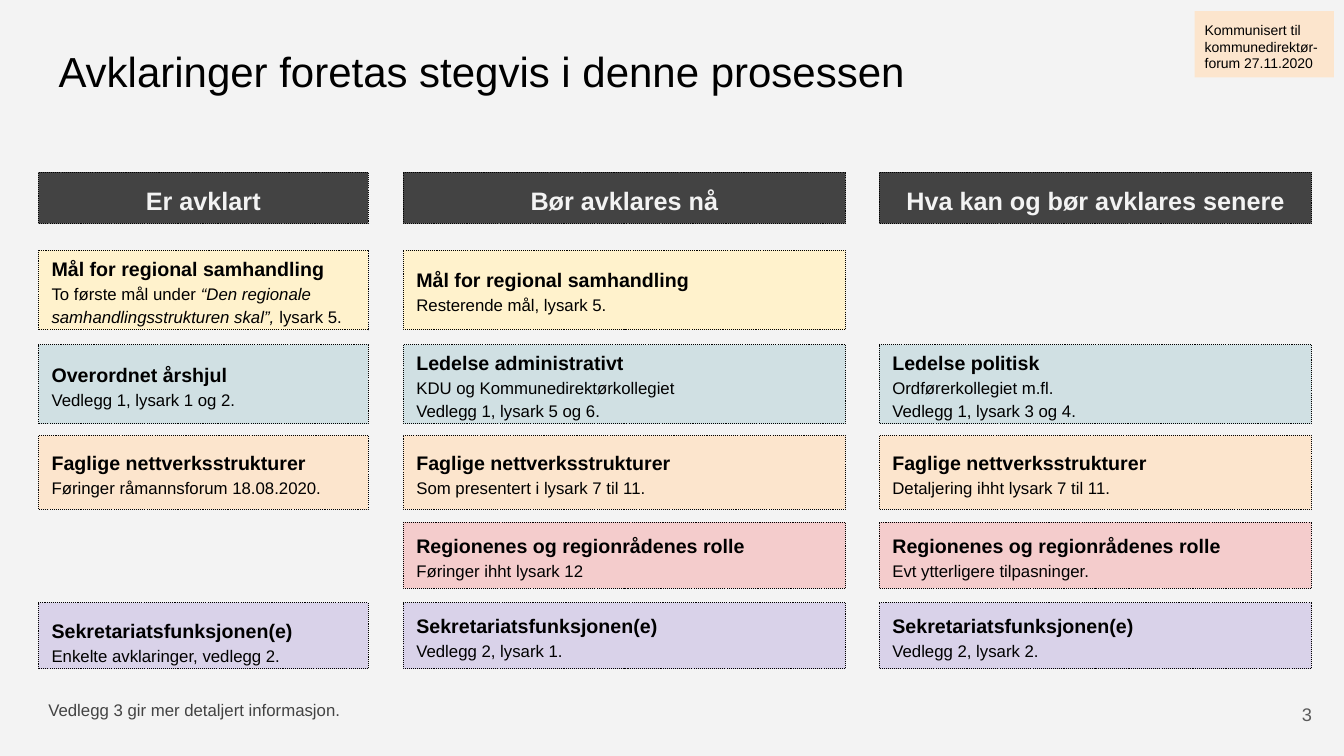
from pptx import Presentation
from pptx.dml.color import RGBColor
from pptx.enum.dml import MSO_LINE
from pptx.enum.shapes import MSO_SHAPE
from pptx.enum.text import MSO_ANCHOR, MSO_AUTO_SIZE, PP_ALIGN
from pptx.util import Pt

RECTANGLE = MSO_SHAPE.RECTANGLE
DOTTED = MSO_LINE.ROUND_DOT
TOP, MIDDLE = MSO_ANCHOR.TOP, MSO_ANCHOR.MIDDLE
LEFT, CENTER, RIGHT = PP_ALIGN.LEFT, PP_ALIGN.CENTER, PP_ALIGN.RIGHT
NO_AUTOFIT = MSO_AUTO_SIZE.NONE

BLACK = RGBColor(0x00, 0x00, 0x00)
CHARCOAL = RGBColor(0x43, 0x43, 0x43)
GRAY = RGBColor(0x59, 0x59, 0x59)
LIGHT = RGBColor(0xF3, 0xF3, 0xF3)
YELLOW = RGBColor(0xFF, 0xF2, 0xCC)
TEAL = RGBColor(0xD0, 0xE0, 0xE3)
ORANGE = RGBColor(0xFC, 0xE5, 0xCD)
PINK = RGBColor(0xF4, 0xCC, 0xCC)
PURPLE = RGBColor(0xD9, 0xD2, 0xE9)

WIDE_INSET, NARROW_INSET = 9.4, 7.2


def write(box, lines, color=BLACK, align=LEFT, anchor=TOP, inset=WIDE_INSET, spacing=1.0):
    """Fill a box with lines, each a list of (text, size, bold, italic) spans."""
    frame = box.text_frame
    frame.word_wrap = True
    frame.auto_size = NO_AUTOFIT
    frame.vertical_anchor = anchor
    frame.margin_left = frame.margin_right = Pt(inset)
    frame.margin_top = frame.margin_bottom = Pt(inset)
    for index, line in enumerate(lines):
        para = frame.add_paragraph() if index else frame.paragraphs[0]
        para.alignment = align
        para.line_spacing = spacing
        for text, size, bold, italic in line:
            span = para.add_run()
            span.text = text
            span.font.name = "Arial"
            span.font.size = Pt(size)
            span.font.bold = bold
            span.font.italic = italic
            span.font.color.rgb = color


def add_panel(page, left, top, width, height, fill, dotted=True):
    panel = page.shapes.add_shape(RECTANGLE, Pt(left), Pt(top), Pt(width), Pt(height))
    panel.shadow.inherit = False
    panel.fill.solid()
    panel.fill.fore_color.rgb = fill
    if dotted:
        panel.line.color.rgb = BLACK
        panel.line.width = Pt(0.75)
        panel.line.dash_style = DOTTED
    else:
        panel.line.fill.background()
    return panel


deck = Presentation()
deck.slide_width, deck.slide_height = Pt(960), Pt(540)
page = deck.slides.add_slide(deck.slide_layouts[5])
page.background.fill.solid()
page.background.fill.fore_color.rgb = LIGHT

title = page.shapes.title
title.left, title.top, title.width, title.height = Pt(32.4), Pt(23), Pt(894), Pt(60)
write(title, [[("Avklaringer foretas stegvis i denne prosessen", 30, False, False)]])

# Columns: heading, left, width
columns = [
    ("Er avklart", 27.4, 235.6),
    ("Bør avklares nå", 288, 316),
    ("Hva kan og bør avklares senere", 628, 309),
]
for heading, left, width in columns:
    header = add_panel(page, left, 123, width, 36.7, CHARCOAL)
    write(header, [[(heading, 18, True, False)]], LIGHT, CENTER, MIDDLE, spacing=1.15)

# Rows: top, height, fill, then one card (topic, details) per column
network = "Faglige nettverksstrukturer"
goals = "Mål for regional samhandling"
regions = "Regionenes og regionrådenes rolle"
secretariat = "Sekretariatsfunksjonen(e)"
rows = [
    (178.6, 57, YELLOW, [
        (goals, [[("To første mål under ", False),
                  ("“Den regionale samhandlingsstrukturen skal”,", True),
                  (" lysark 5.", False)]]),
        (goals, [[("Resterende mål, lysark 5.", False)]]),
        None,
    ]),
    (246.2, 56.6, TEAL, [
        ("Overordnet årshjul", [[("Vedlegg 1, lysark 1 og 2.", False)]]),
        ("Ledelse administrativt", [[("KDU og Kommunedirektørkollegiet", False)],
                                    [("Vedlegg 1, lysark 5 og 6.", False)]]),
        ("Ledelse politisk", [[("Ordførerkollegiet m.fl.", False)],
                              [("Vedlegg 1, lysark 3 og 4.", False)]]),
    ]),
    (311, 52.8, ORANGE, [
        (network, [[("Føringer råmannsforum 18.08.2020.", False)]]),
        (network, [[("Som presentert i lysark 7 til 11.", False)]]),
        (network, [[("Detaljering ihht lysark 7 til 11.", False)]]),
    ]),
    (373, 47.4, PINK, [
        None,
        (regions, [[("Føringer ihht lysark 12", False)]]),
        (regions, [[("Evt ytterligere tilpasninger.", False)]]),
    ]),
    (430.4, 47.4, PURPLE, [
        (secretariat, [[("Enkelte avklaringer, vedlegg 2.", False)]]),
        (secretariat, [[("Vedlegg 2, lysark 1.", False)]]),
        (secretariat, [[("Vedlegg 2, lysark 2.", False)]]),
    ]),
]
for top, height, fill, cards in rows:
    for (heading, left, width), card in zip(columns, cards):
        if card is None:
            continue
        topic, details = card
        lines = [[(topic, 14, True, False)]]
        lines += [[(text, 12, False, italic) for text, italic in detail] for detail in details]
        first_secretariat = topic == secretariat and heading == "Er avklart"
        panel = add_panel(page, left, top, width, height, fill)
        write(panel, lines, anchor=TOP if first_secretariat else MIDDLE, spacing=1.15)

page_number = page.shapes.add_textbox(Pt(889), Pt(489.6), Pt(57.6), Pt(41))
write(page_number, [[("3", 13, False, False)]], GRAY, RIGHT, MIDDLE)

footnote = page.shapes.add_textbox(Pt(27.4), Pt(492.5), Pt(435.6), Pt(28))
write(footnote, [[("Vedlegg 3 gir mer detaljert informasjon.", 12, False, False)]],
      CHARCOAL, inset=NARROW_INSET)

badge = add_panel(page, 853.4, 8, 99.4, 47.4, ORANGE, dotted=False)
write(badge, [[("Kommunisert til kommunedirektør- forum 27.11.2020", 10, False, False)]],
      inset=NARROW_INSET)

deck.save("out.pptx")
